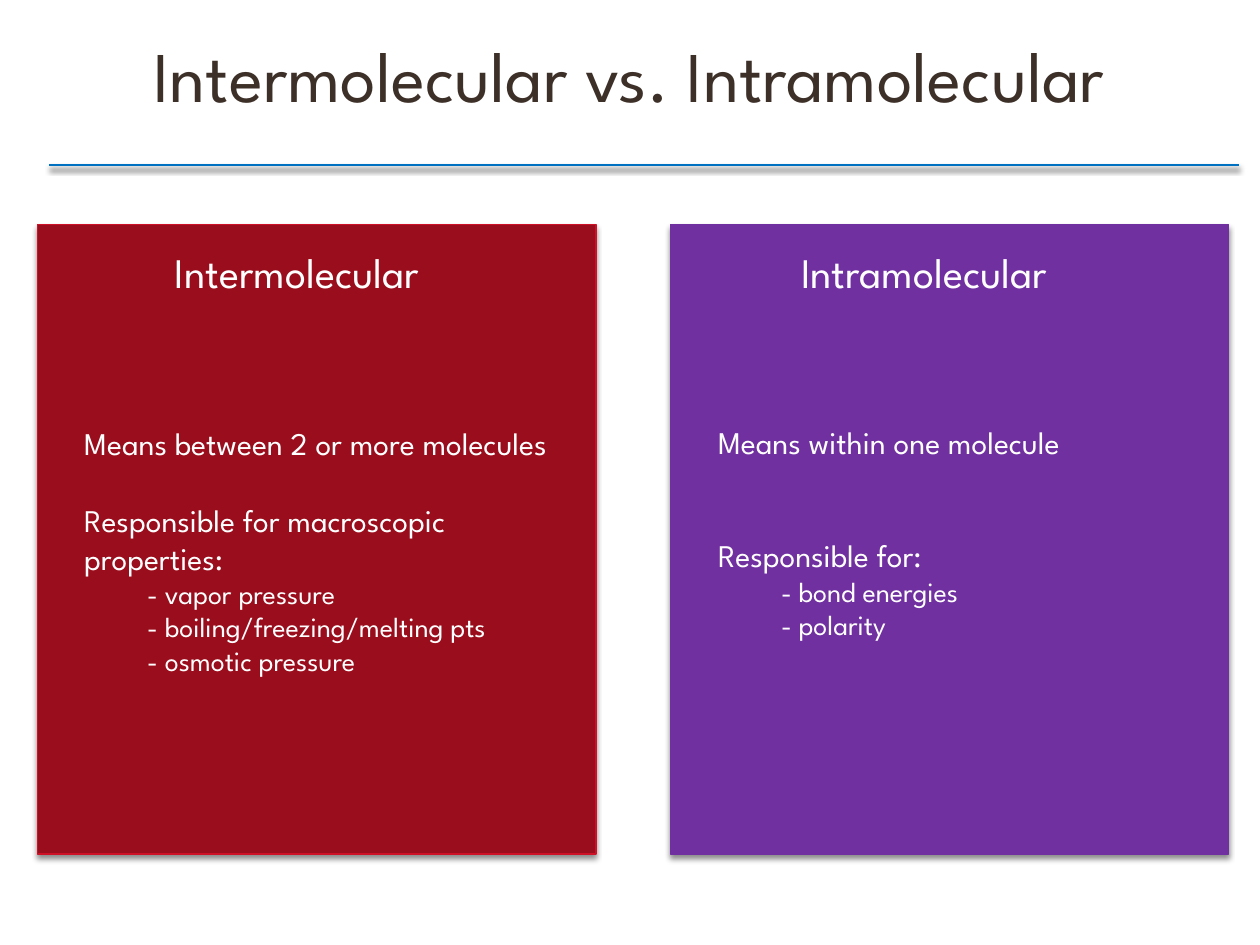
from lxml import etree
from pptx import Presentation
from pptx.dml.color import RGBColor
from pptx.enum.shapes import MSO_CONNECTOR, MSO_SHAPE
from pptx.enum.text import MSO_ANCHOR, PP_ALIGN
from pptx.oxml.ns import qn
from pptx.util import Inches, Pt

STRAIGHT = MSO_CONNECTOR.STRAIGHT
RECTANGLE = MSO_SHAPE.RECTANGLE
MIDDLE = MSO_ANCHOR.MIDDLE
CENTER = PP_ALIGN.CENTER

FONT = "League Spartan"
BROWN = RGBColor(0x3D, 0x30, 0x28)
BLUE = RGBColor(0x00, 0x70, 0xC0)
DARK_RED = RGBColor(0x9A, 0x0D, 0x1C)
RED = RGBColor(0xCE, 0x11, 0x26)
PURPLE = RGBColor(0x70, 0x30, 0xA0)
WHITE = RGBColor(0xFF, 0xFF, 0xFF)


def add_text(page, left, top, width, height, lines, color):
    """Add a text box; each line is (text, size, space before, indent in inches)."""
    box = page.shapes.add_textbox(Inches(left), Inches(top), Inches(width), Inches(height))
    frame = box.text_frame
    frame.word_wrap = True
    frame.text = "\n".join(line[0] for line in lines)
    for para, (_, size, space, indent) in zip(frame.paragraphs, lines):
        if indent:
            para._p.get_or_add_pPr().set("marL", str(Inches(indent)))
        if space:
            para.space_before = Pt(space)
        for span in para.runs:
            span.font.name = FONT
            span.font.size = Pt(size)
            span.font.color.rgb = color
    return frame


def add_shadow(properties):
    """Append a soft shadow, falling straight down, to the shape properties."""
    effects = properties.find(qn("a:effectLst"))
    if effects is None:
        effects = etree.SubElement(properties, qn("a:effectLst"))
    shadow = etree.SubElement(effects, qn("a:outerShdw"), blurRad=str(Pt(3)),
                              dist=str(Pt(2.4)), dir="5400000", rotWithShape="0")
    color = etree.SubElement(shadow, qn("a:srgbClr"), val="000000")
    etree.SubElement(color, qn("a:alpha"), val="45000")


deck = Presentation()
deck.slide_width = Inches(10)
deck.slide_height = Inches(7.5)
page = deck.slides.add_slide(deck.slide_layouts[6])

title = add_text(page, 0.16, 0.11, 9.67, 1.08,
                 [("Intermolecular vs. Intramolecular", 40.7, 0, 0)], BROWN)
title.vertical_anchor = MIDDLE
title.paragraphs[0].alignment = CENTER
title.paragraphs[0].line_spacing = 0.8

rule = page.shapes.add_connector(STRAIGHT, Inches(0.39), Inches(1.31), Inches(9.83), Inches(1.31))
rule.line.color.rgb = BLUE
rule.line.width = Pt(1.5)
add_shadow(rule._element.spPr)

# Panel left, fill, outline, heading, heading left, body left, body top, body height, body lines
panels = [
    (0.3, DARK_RED, RED, "Intermolecular", 1.29, 0.57, 3.32, 2.46, [
        ("Means between 2 or more molecules", 18, 0, 0),
        ("Responsible for macroscopic properties:", 18, 22, 0),
        ("- vapor pressure", 16, 0, 0.5),
        ("- boiling/freezing/melting pts", 16, 0, 0.5),
        ("- osmotic pressure", 16, 0, 0.5),
    ]),
    (5.32, PURPLE, PURPLE, "Intramolecular", 6.26, 5.6, 3.31, 1.92, [
        ("Means within one molecule", 18, 0, 0),
        ("Responsible for:", 18, 43, 0),
        ("- bond energies", 16, 0, 0.5),
        ("- polarity", 16, 0, 0.5),
    ]),
]

for left, fill, outline, heading, heading_left, body_left, body_top, body_height, body in panels:
    panel = page.shapes.add_shape(RECTANGLE, Inches(left), Inches(1.78), Inches(4.43), Inches(5))
    panel.shadow.inherit = False
    panel.fill.solid()
    panel.fill.fore_color.rgb = fill
    panel.line.color.rgb = outline
    panel.line.width = Pt(0.79)
    add_shadow(panel._element.spPr)
    heading_frame = add_text(page, heading_left, 1.91, 2.56, 0.5, [(heading, 24, 0, 0)], WHITE)
    heading_frame.word_wrap = False
    add_text(page, body_left, body_top, 3.88, body_height, body, WHITE)

deck.save("out.pptx")
